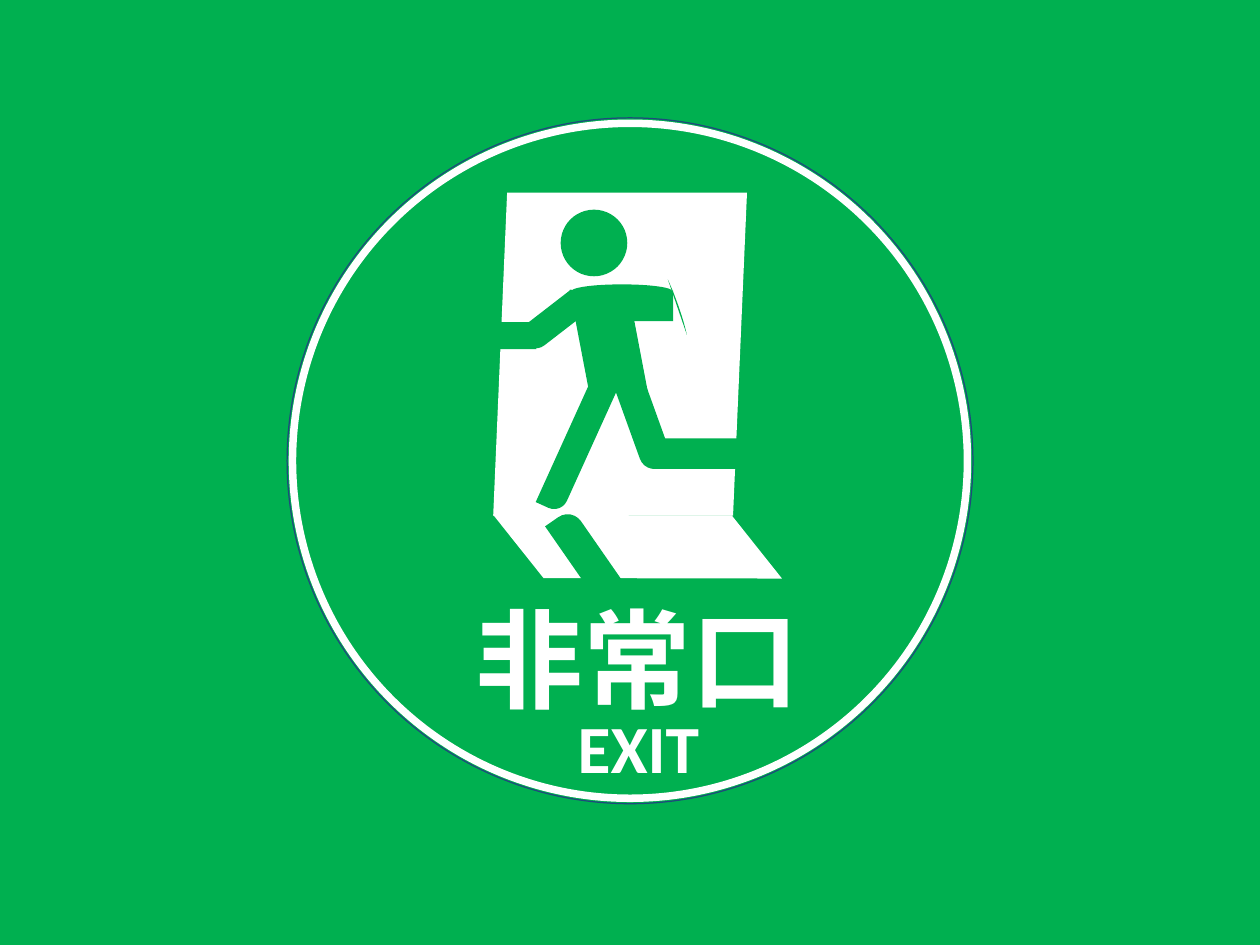
from pptx import Presentation
from pptx import util as u
from pptx.dml.color import RGBColor
from pptx.enum import shapes, text

GREEN = RGBColor(0x00, 0xB0, 0x50)
WHITE = RGBColor(0xFF, 0xFF, 0xFF)
NAVY = RGBColor(0x1F, 0x49, 0x7D)
KIND = shapes.MSO_SHAPE
ANGLE = 0.6  # one degree in adjustment units


def add_part(group, kind, place, fill=GREEN, turn=0, flip=False, adjust=()):
    part = group.shapes.add_shape(kind, *[u.Inches(value) for value in place])
    part.shadow.inherit = False
    part.fill.solid()
    part.fill.fore_color.rgb = fill
    part.line.fill.background()
    part.rotation = turn
    if flip:
        part._element.spPr.xfrm.set("flipH", "1")
    for index, value in enumerate(adjust):
        part.adjustments[index] = value
    return part


deck = Presentation()
deck.slide_width, deck.slide_height = u.Inches(14), u.Inches(10.5)
page = deck.slides.add_slide(deck.slide_layouts[6])
page.background.fill.solid()
page.background.fill.fore_color.rgb = GREEN

# Round border: thin navy rim around a thick white ring
border = page.shapes.add_group_shape()
for size, color, width in [(7.62, NAVY, 1), (7.5, WHITE, 6)]:
    ring = add_part(border, KIND.OVAL, (7 - size / 2, 5.12 - size / 2, size, size))
    ring.line.color.rgb = color
    ring.line.width = u.Pt(width)

sign = page.shapes.add_group_shape()

# Doorway and the light on the floor
add_part(sign, KIND.PARALLELOGRAM, (5.48, 2.14, 2.82, 3.59), WHITE, adjust=[0.055])
add_part(sign, KIND.PARALLELOGRAM, (5.81, 5.04, 2.55, 2.07), WHITE, 231.5,
         adjust=[0.799])

# Shadow and legs
limb = {"kind": KIND.ROUND_1_RECTANGLE, "adjust": [0.5]}
add_part(sign, place=(6.33, 5.65, 0.36, 1.07), turn=325.2, **limb)
add_part(sign, place=(6.25, 4.2, 0.31, 1.51), turn=204.4, flip=True, **limb)
add_part(sign, place=(6.99, 4.24, 0.34, 0.99), turn=160.2, **limb)
add_part(sign, KIND.RECTANGLE, (7.26, 4.87, 1.46, 0.34))

# Torso, left arm and head
add_part(sign, KIND.PARALLELOGRAM, (6.33, 3.22, 0.87, 1.14), flip=True)
add_part(sign, place=(5.98, 3.19, 0.31, 0.77), turn=232.3, flip=True, **limb)
add_part(sign, KIND.RECTANGLE, (4.5, 3.58, 1.46, 0.3))
add_part(sign, KIND.OVAL, (6.23, 2.33, 0.74, 0.74))

# Right arm and shoulders
add_part(sign, KIND.RECTANGLE, (6.74, 3.23, 0.74, 0.34))
add_part(sign, KIND.CHORD, (6.46, 3.14, 1.7, 0.38), turn=248.4,
         adjust=[47.83 * ANGLE, 162 * ANGLE])
add_part(sign, KIND.FLOWCHART_CONNECTOR, (6.35, 3.16, 1.12, 0.15))

# Captions
captions = [
    ("非常口", (5.19, 6.54, 3.85, 1.55), 86.2),
    ("EXIT", (6.32, 7.8, 1.57, 1.01), 54),
]
for wording, place, size in captions:
    box = page.shapes.add_textbox(*[u.Inches(value) for value in place])
    box.text_frame.word_wrap = False
    box.text_frame.auto_size = text.MSO_AUTO_SIZE.SHAPE_TO_FIT_TEXT
    span = box.text_frame.paragraphs[0].add_run()
    span.text = wording
    for name, value in {"name": "Calibri", "size": u.Pt(size), "bold": True}.items():
        setattr(span.font, name, value)
    span.font.color.rgb = WHITE

deck.save("out.pptx")
